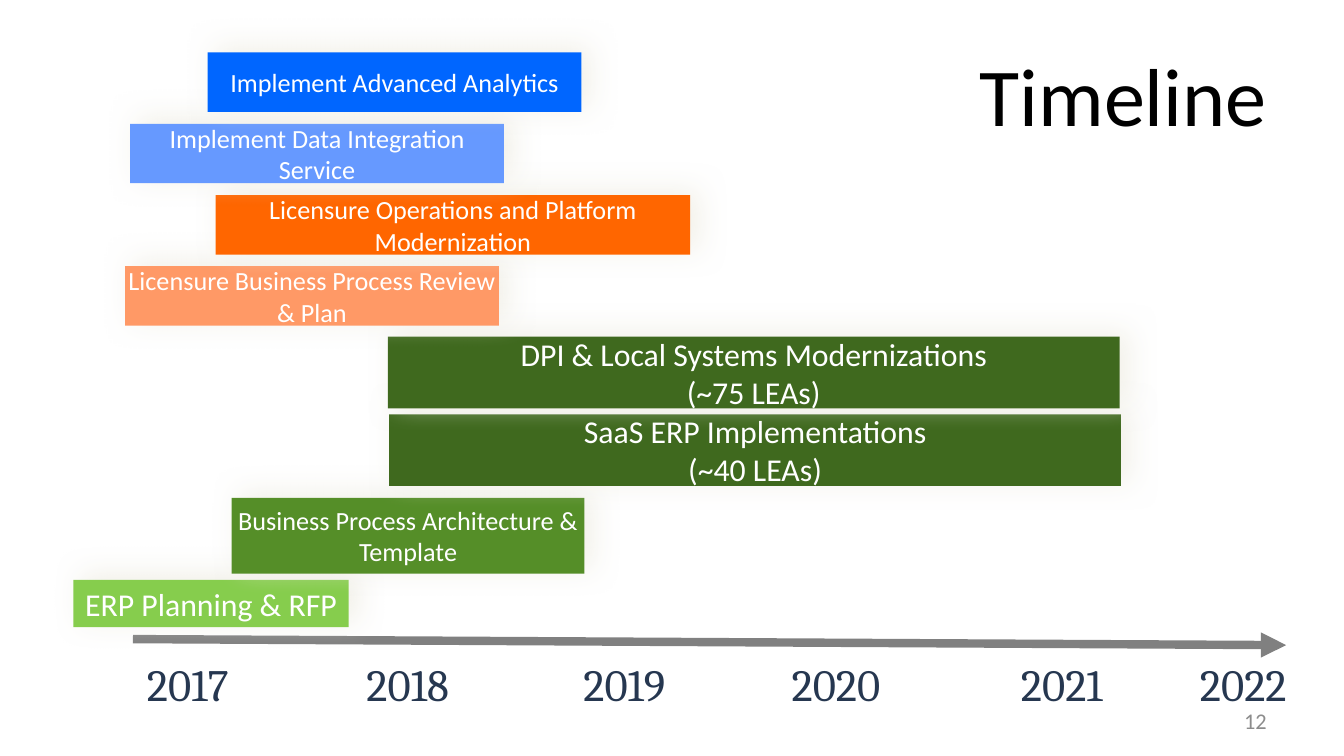
from lxml import etree
from pptx import Presentation
from pptx.dml.color import RGBColor
from pptx.enum.shapes import MSO_CONNECTOR, MSO_SHAPE
from pptx.enum.text import MSO_ANCHOR as ANCHOR, MSO_AUTO_SIZE as AUTO, PP_ALIGN as ALIGN
from pptx.oxml import parse_xml
from pptx.oxml.ns import nsdecls, qn
from pptx.util import Pt

WHITE = RGBColor(0xFF, 0xFF, 0xFF)
BLACK = RGBColor(0x00, 0x00, 0x00)
GRAY = RGBColor(0x80, 0x80, 0x80)
NUMBER_GRAY = RGBColor(0x8C, 0x8C, 0x8C)
NAVY = RGBColor(0x26, 0x37, 0x50)
SHADOW = RGBColor(0xEE, 0xEC, 0xE1)
BLUE = RGBColor(0x00, 0x66, 0xFF)
LIGHT_BLUE = RGBColor(0x66, 0x99, 0xFF)
ORANGE = RGBColor(0xFF, 0x66, 0x00)
LIGHT_ORANGE = RGBColor(0xFF, 0x99, 0x66)
DARK_GREEN = RGBColor(0x3F, 0x69, 0x1E)
GREEN = RGBColor(0x55, 0x8E, 0x28)
LIGHT_GREEN = RGBColor(0x86, 0xCD, 0x4D)

# Bars: lines of text, left, top, width, height, font size, fill
BARS = [
    (["Implement Advanced Analytics"], 95.8, 0, 267, 42.5, 18.7, BLUE),
    (["Implement Data Integration Service"], 40.5, 51, 267, 42.5, 18.7, LIGHT_BLUE),
    (["Licensure Operations and Platform Modernization"],
     101.5, 102, 339, 42.5, 18.7, ORANGE),
    (["Licensure Business Process Review & Plan"],
     36.8, 152.7, 267, 42.5, 18.7, LIGHT_ORANGE),
    (["DPI & Local Systems Modernizations", "(~75 LEAs)"],
     224.5, 203.1, 522.7, 51.2, 22.7, DARK_GREEN),
    (["SaaS ERP Implementations", "(~40 LEAs)"],
     225.5, 258.6, 522.7, 51.2, 22.7, DARK_GREEN),
    (["Business Process Architecture & Template"],
     113, 318.3, 252, 54, 18.7, GREEN),
    (["ERP Planning & RFP"], 0, 376.8, 196.5, 33.7, 22.7, LIGHT_GREEN),
]

# Years and their offsets along the axis
YEARS = {"2017": -2.9, "2018": 154.1, "2019": 308.9,
         "2020": 460.1, "2021": 621.4, "2022": 751}


def write(sp, *lines, size, color, font="Calibri", align=ALIGN.CENTER,
          anchor=ANCHOR.MIDDLE, inset=(7.2, 3.6)):
    tf = sp.text_frame
    tf.word_wrap = True
    tf.auto_size = AUTO.NONE
    tf.vertical_anchor = anchor
    tf.margin_left = tf.margin_right = Pt(inset[0])
    tf.margin_top = tf.margin_bottom = Pt(inset[1])
    for i, line in enumerate(lines):
        p = tf.paragraphs[0] if i == 0 else tf.add_paragraph()
        p.alignment = align
        r = p.add_run()
        r.text = line
        r.font.name = font
        r.font.size = Pt(size)
        r.font.color.rgb = color


def add_soft_shadow(sp):
    sp.shadow.inherit = False
    effects = sp._element.spPr.find(qn("a:effectLst"))
    effects.append(parse_xml(
        f'<a:outerShdw {nsdecls("a")} blurRad="{Pt(21)}" dist="{Pt(7)}" '
        f'dir="{326 * 60000}" algn="ctr" rotWithShape="0">'
        f'<a:srgbClr val="{SHADOW}"><a:alpha val="75000"/></a:srgbClr>'
        '</a:outerShdw>'))


def add_title(slide, left, top, width, height):
    sp = slide.shapes.title
    sp.left, sp.top, sp.width, sp.height = Pt(left), Pt(top), Pt(width), Pt(height)
    write(sp, "Timeline", size=58.7, color=BLACK, align=ALIGN.RIGHT)


def add_axis(slide, left, top, width, drop):
    # Arrow
    line = slide.shapes.add_connector(
        MSO_CONNECTOR.STRAIGHT, Pt(left), Pt(top), Pt(left + width), Pt(top + drop))
    line.line.color.rgb = GRAY
    line.line.width = Pt(6)
    etree.SubElement(line.line._get_or_add_ln(), qn("a:tailEnd"), type="triangle")
    etree.SubElement(line._element.spPr, qn("a:effectLst"))

    # Year labels
    for year, offset in YEARS.items():
        sp = slide.shapes.add_textbox(
            Pt(left + offset), Pt(top + 9.4), Pt(84.2), Pt(44.6))
        write(sp, year, size=32, color=NAVY, font="Cambria",
              anchor=ANCHOR.TOP, inset=(5.8, 2.9))


def add_bars(slide, left, top):
    # Drawn from the bottom row up
    for lines, x, y, width, height, size, fill in reversed(BARS):
        sp = slide.shapes.add_shape(
            MSO_SHAPE.RECTANGLE, Pt(left + x), Pt(top + y), Pt(width), Pt(height))
        sp.fill.solid()
        sp.fill.fore_color.rgb = fill
        sp.line.fill.background()
        add_soft_shadow(sp)
        write(sp, *lines, size=size, color=WHITE, inset=(0, 0))


def add_page_number(slide, left, top, width, height):
    sp = slide.shapes.add_textbox(Pt(left), Pt(top), Pt(width), Pt(height))
    write(sp, "12", size=16, color=NUMBER_GRAY, align=ALIGN.RIGHT)


def main():
    prs = Presentation()
    prs.slide_width, prs.slide_height = Pt(960), Pt(540)
    slide = prs.slides.add_slide(prs.slide_layouts[5])
    add_title(slide, 48, 21.6, 864, 90)
    add_axis(slide, 95, 456.5, 823.7, 4.3)
    add_bars(slide, 52.5, 37.4)
    add_page_number(slide, 688, 500.5, 224, 28.8)
    prs.save("out.pptx")


if __name__ == "__main__":
    main()
